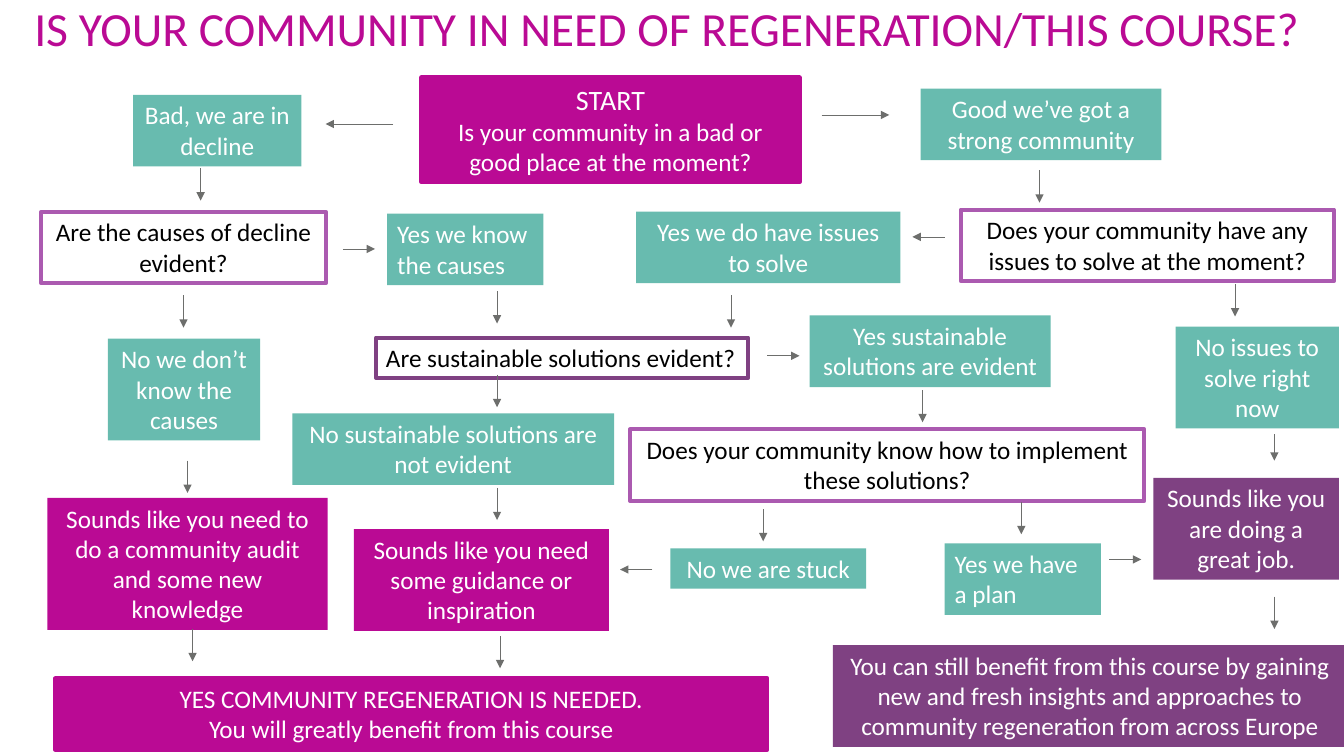
from dataclasses import dataclass
from typing import NamedTuple, Optional

from lxml import etree
from pptx import Presentation
from pptx.dml.color import RGBColor
from pptx.enum.shapes import MSO_CONNECTOR, MSO_SHAPE
from pptx.enum.text import MSO_ANCHOR, MSO_AUTO_SIZE, PP_ALIGN
from pptx.oxml.ns import qn
from pptx.slide import Slide
from pptx.text.text import Font
from pptx.util import Inches, Pt

RECT = MSO_SHAPE.RECTANGLE
STRAIGHT = MSO_CONNECTOR.STRAIGHT
TOP = MSO_ANCHOR.TOP
GROW, FIXED = MSO_AUTO_SIZE.SHAPE_TO_FIT_TEXT, MSO_AUTO_SIZE.NONE
LEFT, CENTER = PP_ALIGN.LEFT, PP_ALIGN.CENTER
TITLE_ONLY = 5


@dataclass(frozen=True)
class Theme:
    font: str = "Calibri"
    pink: str = "BA0A94"
    teal: str = "68BBAF"
    plum: str = "7F4182"
    lilac: str = "AB5AB0"
    gray: str = "6D6E6C"
    white: str = "FFFFFF"
    black: str = "000000"
    title: int = 34
    start: int = 20
    body: int = 18
    edge: float = 3
    wire: float = 0.5


THEME = Theme()


class Kind(NamedTuple):
    fill: Optional[str]
    line: Optional[str]
    ink: str


ANSWER = Kind(THEME.teal, None, THEME.white)
ASK = Kind(None, THEME.lilac, THEME.black)
ASK_PLUM = Kind(None, THEME.plum, THEME.black)
NEED = Kind(THEME.pink, None, THEME.white)
FRAMED = Kind(THEME.pink, THEME.pink, THEME.white)
FINE = Kind(THEME.plum, None, THEME.white)


class Box(NamedTuple):
    x: float
    y: float
    w: float
    h: float
    kind: Kind
    text: str
    align: PP_ALIGN = CENTER
    lead: int = THEME.body


class Arrow(NamedTuple):
    x: float
    y: float
    way: tuple[int, int]
    size: float = 0.32


DOWN, EAST, WEST = (0, 1), (1, 0), (-1, 0)

TITLE = "IS YOUR COMMUNITY IN NEED OF REGENERATION/THIS COURSE?"

BOXES = [
    Box(4.18, 0.77, 3.75, 1.04, FRAMED,
        "START\nIs your community in a bad or good place at the moment?", lead=THEME.start),
    Box(1.32, 0.94, 1.67, 0.71, ANSWER, "Bad, we are in decline"),
    Box(9.13, 0.88, 2.39, 0.71, ANSWER, "Good we’ve got a strong community"),
    Box(0.41, 2.1, 2.82, 0.71, ASK, "Are the causes of decline evident?"),
    Box(3.84, 2.12, 1.55, 0.71, ANSWER, "Yes we know the causes", LEFT),
    Box(6.31, 2.1, 2.62, 0.71, ANSWER, "Yes we do have issues to solve"),
    Box(9.53, 2.08, 3.7, 0.71, ASK,
        "Does your community have any issues to solve at the moment?"),
    Box(1.07, 3.36, 1.51, 1.01, ANSWER, "No we don’t know the causes"),
    Box(3.73, 3.35, 3.69, 0.4, ASK_PLUM, "Are sustainable solutions evident?", LEFT),
    Box(8.03, 3.13, 2.39, 0.71, ANSWER, "Yes sustainable solutions are evident"),
    Box(11.66, 3.24, 1.62, 1.01, ANSWER, "No issues to solve right now"),
    Box(2.9, 4.1, 3.19, 0.71, ANSWER, "No sustainable solutions are not evident"),
    Box(6.25, 4.26, 5.1, 0.71, ASK,
        "Does your community know how to implement these solutions?"),
    Box(0.47, 4.94, 2.78, 1.31, NEED,
        "Sounds like you need to do a community audit and some new knowledge"),
    Box(3.51, 5.25, 2.53, 1.01, NEED, "Sounds like you need some guidance or inspiration"),
    Box(6.65, 5.44, 1.94, 0.4, ANSWER, "No we are stuck"),
    Box(9.37, 5.39, 1.55, 0.71, ANSWER, "Yes we have a plan", LEFT),
    Box(11.44, 4.74, 1.84, 1.01, FINE, "Sounds like you are doing a great job."),
    Box(0.55, 6.73, 7.06, 0.71, FRAMED,
        "YES COMMUNITY REGENERATION IS NEEDED.\nYou will greatly benefit from this course"),
    Box(8.26, 6.4, 5.1, 1.01, FINE,
        "You can still benefit from this course by gaining new and fresh insights "
        "and approaches to community regeneration from across Europe"),
]

ARROWS = [
    Arrow(3.9, 1.23, WEST, 0.67),
    Arrow(8.15, 1.14, EAST, 0.67),
    Arrow(1.99, 1.67, DOWN),
    Arrow(10.31, 1.69, DOWN),
    Arrow(3.4, 2.47, EAST),
    Arrow(9.37, 2.35, WEST),
    Arrow(1.82, 2.93, DOWN),
    Arrow(4.93, 2.89, DOWN),
    Arrow(7.25, 2.93, DOWN),
    Arrow(12.25, 2.82, DOWN),
    Arrow(7.61, 3.53, EAST),
    Arrow(4.93, 3.72, DOWN),
    Arrow(9.15, 3.87, DOWN),
    Arrow(12.64, 4.31, DOWN, 0.26),
    Arrow(1.86, 4.57, DOWN),
    Arrow(4.93, 4.84, DOWN),
    Arrow(7.57, 5.05, DOWN),
    Arrow(10.13, 4.98, DOWN),
    Arrow(6.47, 5.65, WEST),
    Arrow(11, 5.55, EAST),
    Arrow(12.64, 5.92, DOWN),
    Arrow(1.91, 6.24, DOWN),
    Arrow(4.96, 6.31, DOWN),
]


def tint(code: str) -> RGBColor:
    return RGBColor.from_string(code)


def set_font(font: Font, size: int, ink: str) -> None:
    font.name = THEME.font
    font.size = Pt(size)
    font.color.rgb = tint(ink)


def add_title(slide: Slide) -> None:
    head = slide.shapes.title
    head.left, head.top = Inches(0.24), Inches(0)
    head.width, head.height = Inches(13.55), Inches(0.76)
    frame = head.text_frame
    frame.text = TITLE
    frame.word_wrap = True
    frame.auto_size = FIXED
    frame.vertical_anchor = TOP
    line = frame.paragraphs[0]
    line.alignment = LEFT
    line.line_spacing = 0.9
    set_font(line.runs[0].font, THEME.title, THEME.pink)


def add_box(slide: Slide, box: Box) -> None:
    shape = slide.shapes.add_shape(
        RECT, Inches(box.x), Inches(box.y), Inches(box.w), Inches(box.h))
    shape.shadow.inherit = False
    if box.kind.fill:
        shape.fill.solid()
        shape.fill.fore_color.rgb = tint(box.kind.fill)
    else:
        shape.fill.background()
    if box.kind.line:
        shape.line.color.rgb = tint(box.kind.line)
        shape.line.width = Pt(THEME.edge)
    else:
        shape.line.fill.background()
    frame = shape.text_frame
    frame.text = box.text
    frame.word_wrap = True
    frame.auto_size = GROW
    frame.vertical_anchor = TOP
    for rank, line in enumerate(frame.paragraphs):
        line.alignment = box.align
        size = THEME.body if rank else box.lead
        set_font(line.runs[0].font, size, box.kind.ink)


def add_arrow(slide: Slide, arrow: Arrow) -> None:
    dx, dy = arrow.way
    wire = slide.shapes.add_connector(
        STRAIGHT, Inches(arrow.x), Inches(arrow.y),
        Inches(arrow.x + dx * arrow.size), Inches(arrow.y + dy * arrow.size))
    wire.line.color.rgb = tint(THEME.gray)
    wire.line.width = Pt(THEME.wire)
    props = wire.element.spPr
    etree.SubElement(props.find(qn("a:ln")), qn("a:tailEnd"), type="triangle")
    etree.SubElement(props, qn("a:effectLst"))


def main() -> None:
    deck = Presentation()
    deck.slide_width, deck.slide_height = Inches(13.33), Inches(7.5)
    slide = deck.slides.add_slide(deck.slide_layouts[TITLE_ONLY])
    add_title(slide)
    for box in BOXES:
        add_box(slide, box)
    for arrow in ARROWS:
        add_arrow(slide, arrow)
    deck.save("out.pptx")


if __name__ == "__main__":
    main()
